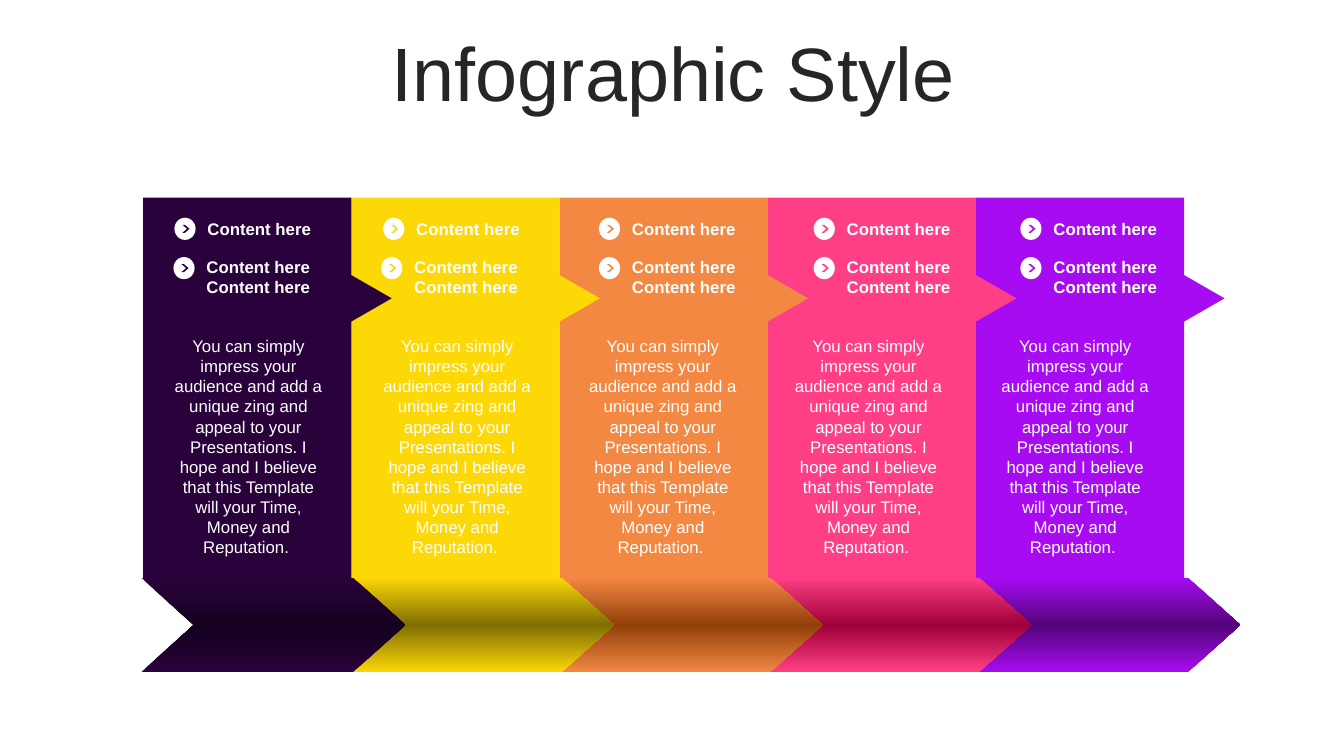
from copy import deepcopy

from pptx import Presentation
from pptx.dml.color import RGBColor
from pptx.enum.shapes import MSO_SHAPE
from pptx.enum.text import MSO_ANCHOR, MSO_AUTO_SIZE, PP_ALIGN
from pptx.oxml.ns import qn
from pptx.util import Inches, Pt

TITLE = "Infographic Style"
BODY = ("You can simply impress your audience and add a unique zing and appeal to your "
        "Presentations. I hope and I believe that this Template will your Time, "
        "Money and Reputation. ")
SHORT_ITEM = ["Content here"]
LONG_ITEM = ["Content here", "Content here"]

WHITE = RGBColor(0xFF, 0xFF, 0xFF)
TITLE_COLOR = RGBColor(0x26, 0x26, 0x26)

# colour, dark band colour, left of short item, left of long item, left of body
STEPS = [
    (RGBColor(0x29, 0x02, 0x3C), RGBColor(0x14, 0x01, 0x1E), 1.73, 1.72, 1.61),
    (RGBColor(0xFC, 0xD8, 0x07), RGBColor(0x80, 0x6D, 0x02), 3.80, 3.78, 3.68),
    (RGBColor(0xF3, 0x88, 0x43), RGBColor(0x92, 0x3F, 0x09), 5.94, 5.94, 5.72),
    (RGBColor(0xFF, 0x3F, 0x85), RGBColor(0x9F, 0x00, 0x3A), 8.07, 8.07, 7.76),
    (RGBColor(0xA7, 0x0B, 0xF2), RGBColor(0x53, 0x05, 0x79), 10.12, 10.12, 9.81),
]

PANEL_LEFT, PANEL_TOP, PANEL_BOTTOM = 1.42, 1.96, 5.74
PANEL_WIDTH = 2.065
TIP_Y, TIP_HALF, TIP_LENGTH = 2.96, 0.23, 0.4
BAND_LEFT, BAND_TOP, BAND_PITCH = 1.4, 5.73, 2.07

prs = Presentation()
prs.slide_width, prs.slide_height = Inches(13.33), Inches(7.5)
slide = prs.slides.add_slide(prs.slide_layouts[6])
shapes = slide.shapes


def add_text(box, paragraphs, size=12, color=WHITE, bold=False,
             align=PP_ALIGN.LEFT, anchor=MSO_ANCHOR.MIDDLE):
    frame = shapes.add_textbox(*map(Inches, box)).text_frame
    frame.word_wrap = True
    frame.auto_size = MSO_AUTO_SIZE.NONE
    frame.vertical_anchor = anchor
    for index, text in enumerate(paragraphs):
        paragraph = frame.add_paragraph() if index else frame.paragraphs[0]
        paragraph.alignment = align
        run = paragraph.add_run()
        run.text = text
        run.font.name = "Arial"
        run.font.size = Pt(size)
        run.font.bold = bold
        run.font.color.rgb = color
    return frame


def add_plain_shape(kind, box, color):
    shape = shapes.add_shape(kind, *map(Inches, box))
    shape.shadow.inherit = False
    shape.line.fill.background()
    shape.fill.solid()
    shape.fill.fore_color.rgb = color
    return shape


def add_panel(left, color):
    """Draw a tall panel with an arrow tip on its right edge."""
    right = left + PANEL_WIDTH
    outline = [
        (left, PANEL_TOP), (right, PANEL_TOP), (right, TIP_Y - TIP_HALF),
        (right + TIP_LENGTH, TIP_Y), (right, TIP_Y + TIP_HALF),
        (right, PANEL_BOTTOM), (left, PANEL_BOTTOM),
    ]
    start, *rest = [(Inches(x), Inches(y)) for x, y in outline]
    builder = shapes.build_freeform(*start)
    builder.add_line_segments(rest, close=True)
    panel = builder.convert_to_shape()
    panel.shadow.inherit = False
    panel.line.fill.background()
    panel.fill.solid()
    panel.fill.fore_color.rgb = color


def add_band(left, color, dark):
    """Draw a chevron whose colour darkens towards its middle line."""
    band = add_plain_shape(MSO_SHAPE.CHEVRON, (left, BAND_TOP, 2.62, 0.94), color)
    band.adjustments[0] = 0.555
    band.fill.gradient()
    band.fill.gradient_angle = 270
    stop_list = band._element.spPr.find(".//" + qn("a:gsLst"))
    stop_list.insert(1, deepcopy(stop_list[0]))
    stops = zip(band.fill.gradient_stops, (0, 0.5, 1), (color, dark, color))
    for stop, position, stop_color in stops:
        stop.position = position
        stop.color.rgb = stop_color


def add_item(left, top, text_top, text_height, lines, color):
    """Draw a round arrow bullet with its bold lines."""
    add_plain_shape(MSO_SHAPE.OVAL, (left, top, 0.21, 0.22), WHITE)
    arrow = add_plain_shape(
        MSO_SHAPE.CHEVRON, (left + 0.08, top + 0.07, 0.07, 0.08), color)
    arrow.adjustments[0] = 0.652
    add_text((left + 0.23, text_top, 1.27, text_height), lines, bold=True)


title = add_text((0.35, 0.37, 12.66, 0.79), [TITLE], 54, TITLE_COLOR,
                 align=PP_ALIGN.CENTER).paragraphs[0]
title.line_spacing = 0.9
title.space_before = Pt(10)

# Right to left, so that each tip lies over the next panel
for index, (color, dark, *_) in reversed(list(enumerate(STEPS))):
    add_panel(PANEL_LEFT + index * PANEL_WIDTH, color)
    add_band(BAND_LEFT + index * BAND_PITCH, color, dark)

for color, _, short_left, long_left, body_left in STEPS:
    add_item(short_left, 2.16, 2.12, 0.3, SHORT_ITEM, color)
    add_item(long_left, 2.55, 2.5, 0.5, LONG_ITEM, color)
    add_text((body_left, 3.28, 1.71, 2.32), [BODY],
             align=PP_ALIGN.CENTER, anchor=MSO_ANCHOR.TOP)

prs.save("out.pptx")
